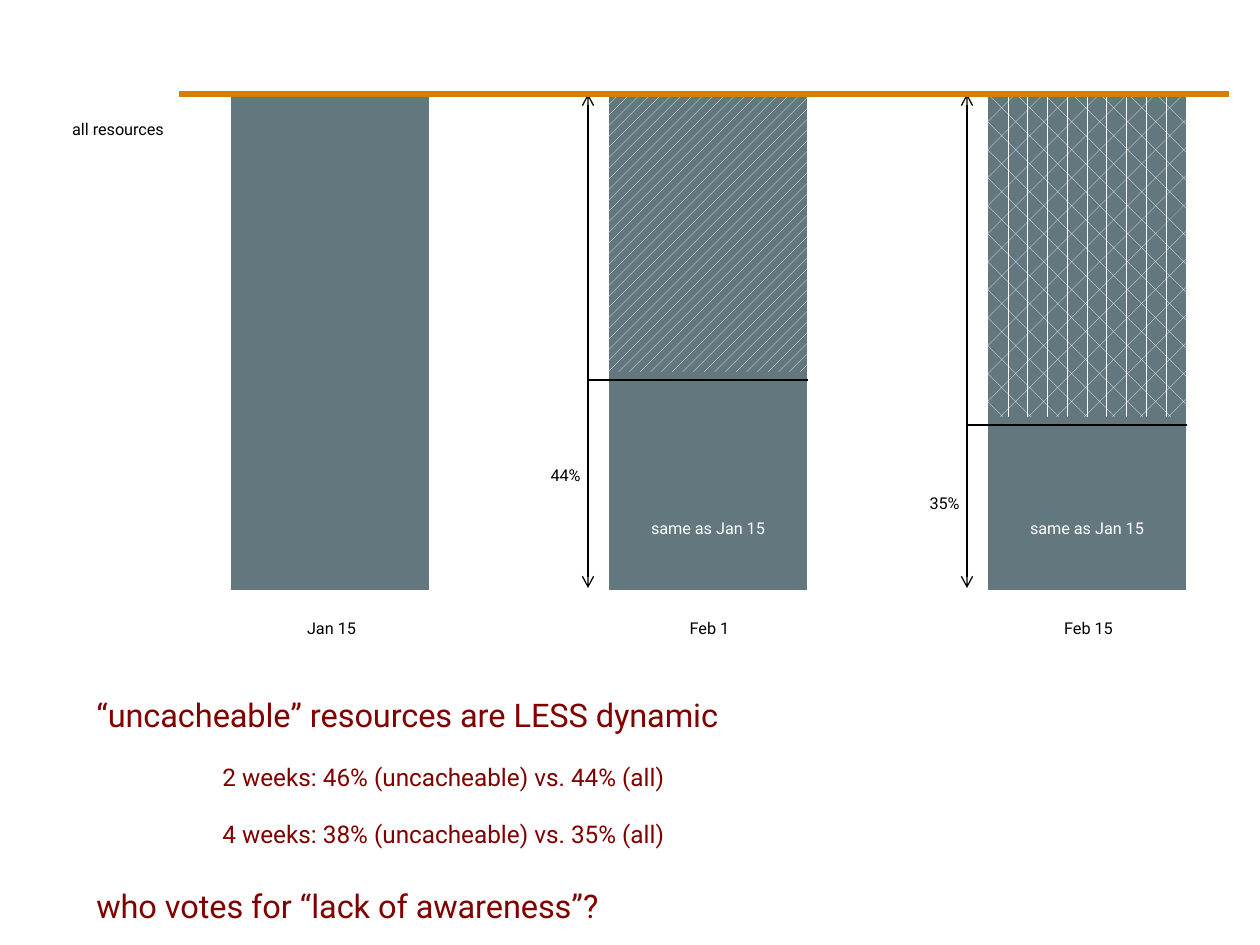
"""Build the slide comparing how many resources stay the same over four weeks."""
from lxml import etree
from pptx import Presentation
from pptx.dml.color import RGBColor
from pptx.enum.dml import MSO_PATTERN
from pptx.enum.shapes import MSO_CONNECTOR, MSO_SHAPE
from pptx.enum.text import MSO_ANCHOR, PP_ALIGN
from pptx.oxml.ns import qn
from pptx.util import Pt

SCALE = 914400 / 126
LEFT, CENTER, RIGHT = PP_ALIGN.LEFT, PP_ALIGN.CENTER, PP_ALIGN.RIGHT
TOP = MSO_ANCHOR.TOP
DOTS, DIVOT = MSO_PATTERN.PERCENT_20, MSO_PATTERN.DIVOT
RECTANGLE, STRAIGHT = MSO_SHAPE.RECTANGLE, MSO_CONNECTOR.STRAIGHT
COLORS = {
    name: RGBColor.from_string(value)
    for name, value in {
        "bar": "63777E",
        "hatch": "FFFFFF",
        "rule": "D67D04",
        "text": "000000",
        "light": "FFFFFF",
        "accent": "800000",
    }.items()
}
BAR_TOP, BAR_WIDTH, BAR_HEIGHT = 94, 198, 496
BAR_BOTTOM = BAR_TOP + BAR_HEIGHT

presentation = Presentation()
presentation.slide_width = round(1260 * SCALE)
presentation.slide_height = round(945 * SCALE)
slide = presentation.slides.add_slide(presentation.slide_layouts[6])


def add_text(box, lines, align, color, panel=False):
    lengths = [round(length * SCALE) for length in box]
    if panel:
        shape = slide.shapes.add_shape(RECTANGLE, *lengths)
        shape.shadow.inherit = False
        shape.line.fill.background()
        shape.fill.solid()
        shape.fill.fore_color.rgb = COLORS["light"]
        fill_color = shape._element.spPr.find(".//" + qn("a:srgbClr"))
        etree.SubElement(fill_color, qn("a:alpha"), val="82000")
    else:
        shape = slide.shapes.add_textbox(*lengths)
    frame = shape.text_frame
    frame.word_wrap = True
    frame.vertical_anchor = TOP
    for index, (text, size, indent) in enumerate(lines):
        paragraph = frame.paragraphs[0] if index == 0 else frame.add_paragraph()
        paragraph.alignment = align
        paragraph._p.get_or_add_pPr().set("marL", str(round(indent * SCALE)))
        run = paragraph.add_run()
        run.text = text
        for name, value in {"name": "Roboto", "size": Pt(size)}.items():
            setattr(run.font, name, value)
        run.font.color.rgb = COLORS[color]
        run._r.get_or_add_rPr().set("baseline", "-25000")


def add_line(points, color, width, arrows=False):
    line = slide.shapes.add_connector(STRAIGHT, *[round(length * SCALE) for length in points])
    line.line.color.rgb = COLORS[color]
    line.line.width = Pt(width)
    etree.SubElement(line._element.spPr, qn("a:effectLst"))
    if arrows:
        for end in ("a:headEnd", "a:tailEnd"):
            etree.SubElement(line.line._get_or_add_ln(), qn(end), type="arrow")


columns = [
    ("Jan 15", 231, None, None, None, None),
    ("Feb 1", 609, DOTS, "44%", 372, 440),
    ("Feb 15", 988, DIVOT, "35%", 417, 468),
]
for date, left, pattern, share, same_top, share_top in columns:
    parts = [(BAR_TOP, pattern)]
    if share:
        parts.append((same_top, None))
        add_text((left - 90, share_top, 74, 47), [(share, 16, 0)], RIGHT, "text", panel=True)
    for top, part_pattern in parts:
        box = (left, top, BAR_WIDTH, BAR_BOTTOM - top)
        bar = slide.shapes.add_shape(RECTANGLE, *[round(length * SCALE) for length in box])
        bar.shadow.inherit = False
        bar.line.fill.background()
        if part_pattern:
            bar.fill.patterned()
            bar.fill.pattern = part_pattern
            bar.fill.fore_color.rgb = COLORS["hatch"]
            bar.fill.back_color.rgb = COLORS["bar"]
        else:
            bar.fill.solid()
            bar.fill.fore_color.rgb = COLORS["bar"]
    add_text((left + 27, 593, 147, 47), [(date, 16, 0)], CENTER, "text")
    if share:
        add_text((left + 20, 493, 158, 81), [("same as Jan 15", 16, 0)], CENTER, "light")
        add_line((left - 21, BAR_TOP, left - 21, 588), "text", 0.75, arrows=True)
        add_line((left + 199, same_top + 8, left - 21, same_top + 8), "text", 1.5)

add_line((179, BAR_TOP, 1229, BAR_TOP), "rule", 3)
add_text((-37, BAR_TOP, 310, 47), [("all resources", 16, 0)], CENTER, "text")

findings = [
    ("“uncacheable” resources are LESS dynamic", 32, 0),
    ("2 weeks: 46% (uncacheable) vs. 44% (all)", 24, 126),
    ("4 weeks: 38% (uncacheable) vs. 35% (all)", 24, 126),
    ("who votes for “lack of awareness”?", 32, 0),
]
add_text((84, 651, 1166, 251), findings, LEFT, "accent")

presentation.save("out.pptx")
